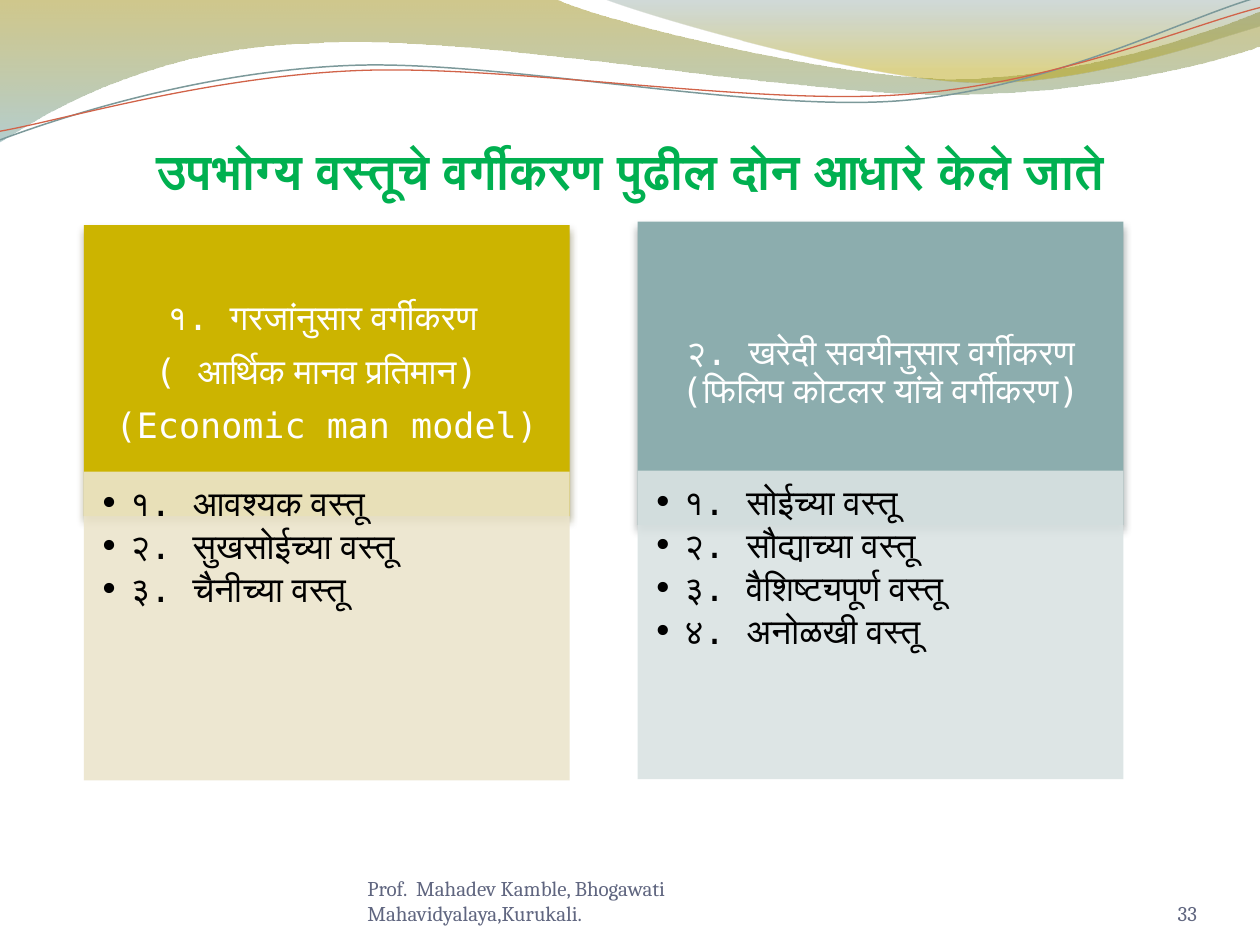
"""Build a slide that sorts consumer goods into two classifications."""
from lxml import etree
from pptx import Presentation
from pptx.dml.color import RGBColor
from pptx.enum.shapes import MSO_SHAPE
from pptx.enum.text import MSO_ANCHOR, PP_ALIGN
from pptx.oxml.ns import qn
from pptx.util import Pt

LEFT, CENTER, RIGHT = PP_ALIGN.LEFT, PP_ALIGN.CENTER, PP_ALIGN.RIGHT
TOP, MIDDLE, BOTTOM = MSO_ANCHOR.TOP, MSO_ANCHOR.MIDDLE, MSO_ANCHOR.BOTTOM
RECTANGLE = MSO_SHAPE.RECTANGLE
WHITE = RGBColor(0xFF, 0xFF, 0xFF)
BLACK = RGBColor(0x00, 0x00, 0x00)
GREEN = RGBColor(0x00, 0xB0, 0x50)
SLATE = RGBColor(0x60, 0x66, 0x80)
GOLD = RGBColor(0xCC, 0xB4, 0x00)
PALE_GOLD = RGBColor(0xEC, 0xE5, 0xCC)
DARK_GOLD = RGBColor(0x48, 0x3F, 0x00)
TEAL = RGBColor(0x8C, 0xAD, 0xAE)
PALE_TEAL = RGBColor(0xDA, 0xE3, 0xE3)
DARK_TEAL = RGBColor(0x31, 0x3D, 0x3D)
WAVE_OLIVE = RGBColor(0x97, 0x85, 0x00)
WAVE_AQUA = RGBColor(0x77, 0xA5, 0xA6)
WAVE_GRAY = RGBColor(0x64, 0x84, 0x84)
WAVE_YELLOW = RGBColor(0xB4, 0x9F, 0x00)
LINE_TEAL = RGBColor(0x7C, 0x99, 0x9A)
LINE_RED = RGBColor(0xD1, 0x63, 0x49)
MONO, SERIF = "DejaVu Sans Mono", "Cambria"


def write(box, lines, size=20, font=MONO, color=BLACK, bold=False, align=LEFT, anchor=TOP,
          insets=(0, 0, 0, 0), spacing=None, after=0, bullet=False):
    frame = box.text_frame
    frame.word_wrap = True
    frame.vertical_anchor = anchor
    frame.margin_left, frame.margin_top, frame.margin_right, frame.margin_bottom = map(Pt, insets)
    for index, line in enumerate(lines):
        para = frame.paragraphs[0] if index == 0 else frame.add_paragraph()
        para.alignment = align
        para.line_spacing = spacing
        para.space_after = Pt(after)
        if bullet:
            props = para._p.get_or_add_pPr()
            props.set("marL", str(Pt(18)))
            props.set("indent", str(-Pt(18)))
            etree.SubElement(props, qn("a:buFont"), typeface=MONO)
            etree.SubElement(props, qn("a:buChar"), char="•")
        span = para.add_run()
        span.text = line
        span.font.name, span.font.size, span.font.bold = font, Pt(size), bold
        span.font.color.rgb = color


def draw_wave(shapes, start, parts, closed):
    points = [point for part in parts for point in zip(part[::2], part[1::2])]
    builder = shapes.build_freeform(Pt(start[0]), Pt(start[1]))
    builder.add_line_segments([(Pt(x), Pt(y)) for x, y in points], close=closed)
    wave = builder.convert_to_shape()
    wave.shadow.inherit = False
    segments = iter(list(wave._element.iter(qn("a:lnTo"))))
    for part in parts:
        group = [next(segments) for pair in part[::2]]
        if len(group) == 3:
            curve = etree.Element(qn("a:cubicBezTo"))
            group[0].addprevious(curve)
            for segment in group:
                curve.append(segment[0])
                segment.getparent().remove(segment)
    return wave


deck = Presentation()
deck.slide_width, deck.slide_height = Pt(720), Pt(540)
page = deck.slides.add_slide(deck.slide_layouts[6])
shapes = page.shapes

bands = [
    ((0, 0), [(317, -0.7), (343, 12, 478, 45, 546, 45), (614, 45, 690, 19, 720, 6.5), (720.7, 26),
              (708, 32, 626, 55, 537, 54), (448, 54, 275, 20, 185, 24.5),
              (93, 26, 33, 60, -0.7, 81.4)],
     [(0, WAVE_OLIVE, 45), (1, WAVE_AQUA, 55)]),
    ((345, -0.7), [(366, 8, 491, 45, 554, 47), (616, 50, 692, 23, 720, 15), (720, 0)],
     [(0, WAVE_GRAY, 30), (0.8, WAVE_YELLOW, 45)]),
]
for start, parts, stops in bands:
    band = draw_wave(shapes, start, parts, True)
    band.line.fill.background()
    band.fill.gradient()
    band.fill.gradient_angle = 270
    for stop, (position, color, opacity) in zip(band.fill.gradient_stops, stops):
        stop.position = position
        stop.color.rgb = color
    for node, (position, color, opacity) in zip(band._element.spPr.iter(qn("a:srgbClr")), stops):
        etree.SubElement(node, qn("a:alpha"), val=str(opacity * 1000))

curves = [
    ((-1.4, 63), [(33.8, 51.7, 114.1, 29.4, 199.8, 29.9), (284.8, 30.3, 425.8, 67.2, 512.4, 64.9),
                  (599, 62.4, 676.5, 25.7, 720.2, 15.5)], LINE_TEAL, 0.85),
    ((-1.1, 58), [(32.9, 53.8, 118.2, 32.5, 204.1, 33), (290.6, 33.4, 428.9, 63.8, 515.5, 61.4),
                  (601.4, 59.6, 678.4, 30.1, 721.4, 21.3)], LINE_RED, 0.75),
]
for start, parts, color, width in curves:
    curve = draw_wave(shapes, start, parts, False)
    curve.rotation = 357.3
    curve.fill.background()
    curve.line.color.rgb = color
    curve.line.width = Pt(width)

footer = shapes.add_textbox(Pt(210), Pt(500.4), Pt(264), Pt(28.8))
write(footer, ["Prof.  Mahadev Kamble, Bhogawati Mahavidyalaya,Kurukali."],
      size=12, font=SERIF, color=SLATE, anchor=BOTTOM)
number = shapes.add_textbox(Pt(624), Pt(500.4), Pt(60), Pt(28.8))
write(number, ["33"], size=12, font=SERIF, color=SLATE, align=RIGHT, anchor=BOTTOM)
title = shapes.add_textbox(Pt(0), Pt(60), Pt(720), Pt(52.5))
write(title, ["उपभोग्य वस्तूचे वर्गीकरण पुढील दोन आधारे केले जाते"], size=28, color=GREEN, bold=True,
      align=CENTER, insets=(7.2, 3.6, 7.2, 3.6), spacing=1.5)

columns = [
    (48, 128.6, 166.3, 269.5, GOLD, DARK_GOLD, PALE_GOLD, None,
     ["१. गरजांनुसार वर्गीकरण ", "( आर्थिक मानव प्रतिमान) ", "(Economic man model)"],
     ["१. आवश्यक वस्तू", "२. सुखसोईच्या वस्तू", "३. चैनीच्या वस्तू"]),
    (364.4, 126.7, 173.3, 268.9, TEAL, DARK_TEAL, PALE_TEAL, 0.9,
     ["२. खरेदी सवयीनुसार वर्गीकरण (फिलिप कोटलर यांचे वर्गीकरण)"],
     ["१. सोईच्या वस्तू", "२. सौद्याच्या वस्तू", "३. वैशिष्ट्यपूर्ण वस्तू", "४. अनोळखी वस्तू"]),
]
for left, top, height, body_top, strong, dark, pale, spacing, heading, items in columns:
    header = shapes.add_shape(RECTANGLE, Pt(left), Pt(top), Pt(277.6), Pt(height))
    body = shapes.add_shape(RECTANGLE, Pt(left), Pt(body_top), Pt(277.6), Pt(176.4))
    for box, color in ((header, strong), (body, pale)):
        box.shadow.inherit = False
        box.fill.solid()
        box.fill.fore_color.rgb = color
        box.line.fill.background()
    effects = header._element.spPr.find(qn("a:effectLst"))
    shadow = etree.SubElement(effects, qn("a:outerShdw"), blurRad=str(Pt(4.5)),
                              dist=str(Pt(3)), dir="5400000", rotWithShape="0")
    tint = etree.SubElement(shadow, qn("a:srgbClr"), val=str(dark))
    etree.SubElement(tint, qn("a:alpha"), val="48000")
    body_color = body._element.spPr.find(qn("a:solidFill")).find(qn("a:srgbClr"))
    etree.SubElement(body_color, qn("a:alpha"), val="90000")
    write(header, heading, color=WHITE, align=CENTER, anchor=MIDDLE,
          insets=(11.2, 6.4, 11.2, 6.4), spacing=spacing, after=7)
    write(body, items, insets=(8.4, 8.4, 11.2, 12.6), spacing=0.9, after=3, bullet=True)

deck.save("out.pptx")
